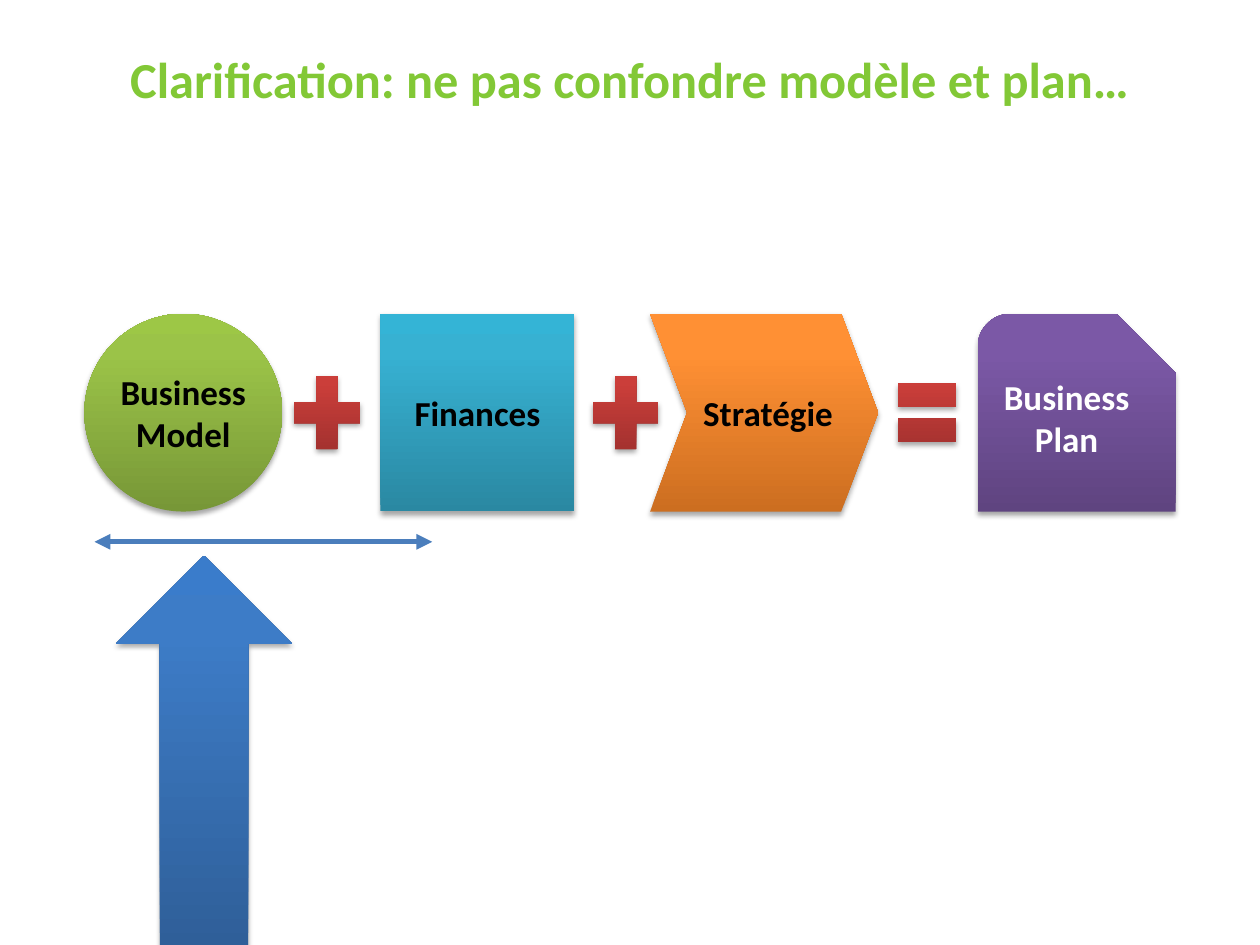
from copy import deepcopy

from lxml import etree
from pptx import Presentation
from pptx.dml.color import RGBColor
from pptx.enum.shapes import MSO_CONNECTOR, MSO_SHAPE
from pptx.enum.text import MSO_ANCHOR, PP_ALIGN
from pptx.oxml.ns import qn
from pptx.util import Inches, Pt

ELLIPSE = MSO_SHAPE.OVAL
RECT = MSO_SHAPE.RECTANGLE
CHEVRON = MSO_SHAPE.CHEVRON
SNIP_ROUND = MSO_SHAPE.SNIP_ROUND_RECTANGLE
PLUS = MSO_SHAPE.MATH_PLUS
EQUAL = MSO_SHAPE.MATH_EQUAL
UP_ARROW = MSO_SHAPE.UP_ARROW
STRAIGHT = MSO_CONNECTOR.STRAIGHT
MIDDLE = MSO_ANCHOR.MIDDLE
CENTER = PP_ALIGN.CENTER

BLACK = RGBColor(0x00, 0x00, 0x00)
WHITE = RGBColor(0xFF, 0xFF, 0xFF)
TITLE_GREEN = RGBColor(0x82, 0xC8, 0x36)
LINE_BLUE = RGBColor(0x4B, 0x7E, 0xBC)

# Gradients from bottom to top
GREEN = (RGBColor(0x77, 0x97, 0x37), RGBColor(0x9B, 0xC3, 0x48), RGBColor(0x9D, 0xC7, 0x46))
TEAL = (RGBColor(0x2A, 0x88, 0xA2), RGBColor(0x37, 0xB1, 0xD2), RGBColor(0x34, 0xB4, 0xD6))
ORANGE = (RGBColor(0xCC, 0x6E, 0x20), RGBColor(0xFF, 0x90, 0x34), RGBColor(0xFF, 0x91, 0x36))
PURPLE = (RGBColor(0x5F, 0x44, 0x80), RGBColor(0x7B, 0x58, 0xA6), RGBColor(0x7C, 0x57, 0xA8))
RED = (RGBColor(0x9C, 0x2F, 0x2D), RGBColor(0xCB, 0x3E, 0x3A), RGBColor(0xCE, 0x3B, 0x37))
BLUE = (RGBColor(0x2F, 0x5F, 0x99), RGBColor(0x3D, 0x7C, 0xC7), RGBColor(0x3A, 0x7C, 0xCB))
STOPS = (0, 0.8, 1)


class SlideBuilder:
    font = "Calibri"

    def __init__(self, slide):
        self.slide = slide

    def add_text(self, tf, text, size, color):
        tf.word_wrap = True
        tf.vertical_anchor = MIDDLE
        p = tf.paragraphs[0]
        p.alignment = CENTER
        r = p.add_run()
        r.text = text
        r.font.name = self.font
        r.font.size = Pt(size)
        r.font.bold = True
        r.font.color.rgb = color

    def title(self, text, x, y, w, h):
        sp = self.slide.shapes.add_textbox(Inches(x), Inches(y), Inches(w), Inches(h))
        self.add_text(sp.text_frame, text, 28.8, TITLE_GREEN)

    def gradient(self, sp, colors):
        sp.fill.gradient()
        sp.fill.gradient_angle = 90
        stops = sp._element.spPr.find(qn("a:gradFill")).find(qn("a:gsLst"))
        stops.append(deepcopy(stops[-1]))
        for stop, position, color in zip(sp.fill.gradient_stops, STOPS, colors):
            stop.position = position
            stop.color.rgb = color

    def shadow(self, sp):
        sp.shadow.inherit = False
        effects = sp._element.spPr.find(qn("a:effectLst"))
        outer = etree.SubElement(effects, qn("a:outerShdw"), blurRad=str(Pt(3.1)),
                                 dist=str(Pt(1.8)), dir="5400000", rotWithShape="0")
        color = etree.SubElement(outer, qn("a:srgbClr"), val=str(BLACK))
        etree.SubElement(color, qn("a:alpha"), val="35000")

    def shape(self, kind, x, y, w, h, colors, adjustments=()):
        sp = self.slide.shapes.add_shape(kind, Inches(x), Inches(y), Inches(w), Inches(h))
        for i, value in enumerate(adjustments):
            sp.adjustments[i] = value
        self.gradient(sp, colors)
        sp.line.fill.background()
        self.shadow(sp)
        return sp

    def block(self, kind, text, x, y, w, h, colors, text_color=BLACK, adjustments=()):
        sp = self.shape(kind, x, y, w, h, colors, adjustments)
        tf = sp.text_frame
        tf.margin_left = tf.margin_right = 0
        self.add_text(tf, text, 20, text_color)

    def double_arrow(self, x1, x2, y):
        line = self.slide.shapes.add_connector(
            STRAIGHT, Inches(x1), Inches(y), Inches(x2), Inches(y))
        line.line.color.rgb = LINE_BLUE
        line.line.width = Pt(3)
        ln = line._element.spPr.find(qn("a:ln"))
        for end in ("a:headEnd", "a:tailEnd"):
            etree.SubElement(ln, qn(end), type="triangle")
        etree.SubElement(line._element.spPr, qn("a:effectLst"))


def main():
    prs = Presentation()
    prs.slide_width, prs.slide_height = Inches(10), Inches(7.5)
    s = SlideBuilder(prs.slides.add_slide(prs.slide_layouts[6]))

    s.title("Clarification: ne pas confondre modèle et plan…", 0.5, 0.3, 9, 0.64)

    # Parts of the equation
    top, height = 2.49, 1.57
    s.block(ELLIPSE, "Business Model", 0.67, top, 1.57, height, GREEN)
    s.block(CHEVRON, " Stratégie", 5.16, top, 1.81, height, ORANGE, adjustments=(0.187,))
    s.block(SNIP_ROUND, "Business Plan", 7.76, top, 1.57, height, PURPLE, WHITE,
            (0.167, 0.299))

    # Operators
    for kind, x, w in ((PLUS, 2.24, 0.71), (PLUS, 4.61, 0.71), (EQUAL, 7.04, 0.63)):
        s.shape(kind, x, 2.88, w, 0.79, RED)

    s.block(RECT, "Finances", 3.02, top, 1.54, height, TEAL)

    # Focus on the model
    s.shape(UP_ARROW, 0.92, 4.41, 1.4, 3.1, BLUE)
    s.double_arrow(0.75, 3.43, 4.3)

    prs.save("out.pptx")


if __name__ == "__main__":
    main()
